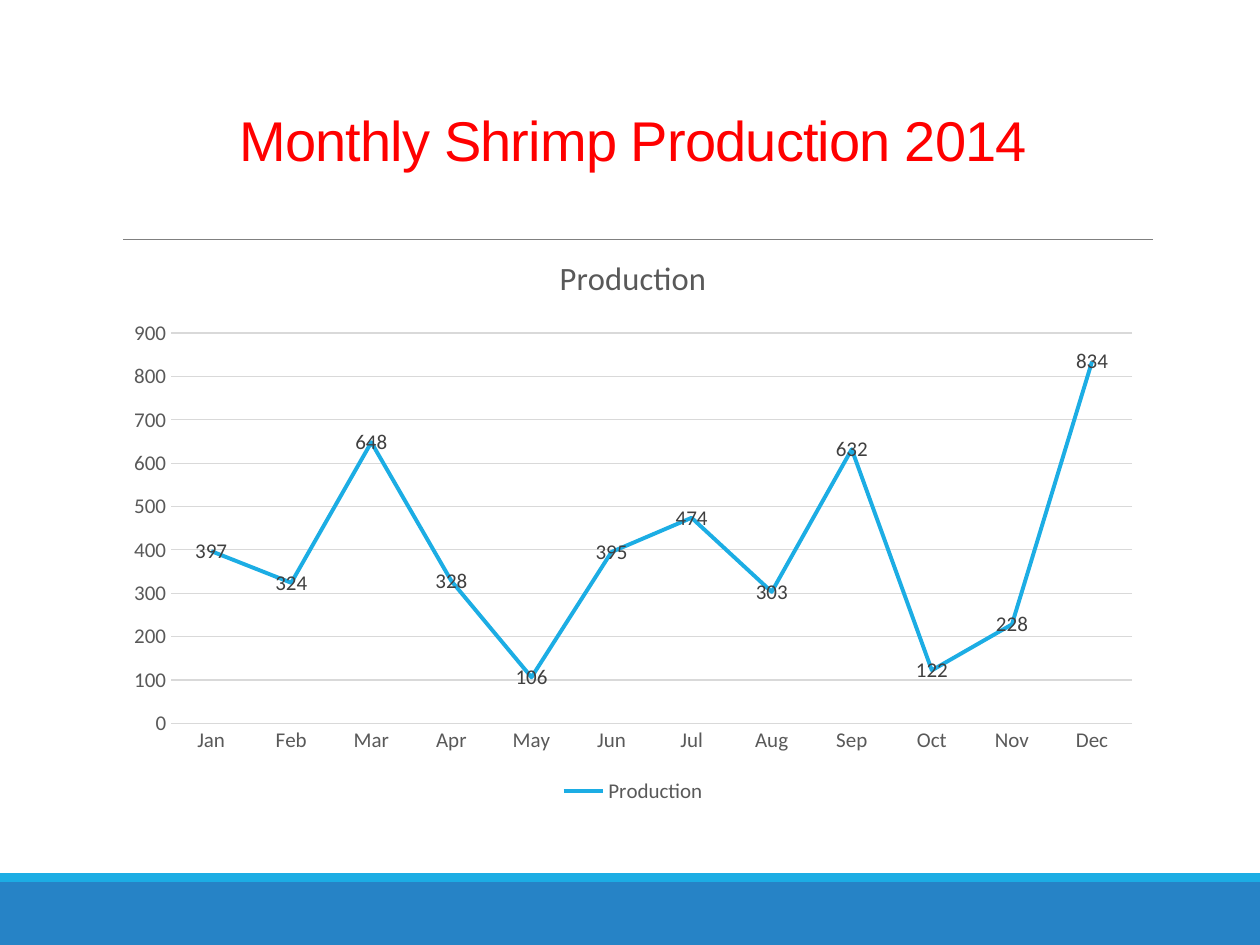
from dataclasses import dataclass

import lxml.etree
import pptx
import pptx.chart.data
import pptx.dml.color
import pptx.enum.chart
import pptx.enum.shapes
import pptx.enum.text
import pptx.oxml.ns
import pptx.util


@dataclass(frozen=True)
class Theme:
    background: str = "FFFFFF"
    band: str = "2683C6"
    accent: str = "1CADE4"
    rule: str = "808080"
    title: str = "FF0000"
    chart_text: str = "595959"
    data_label: str = "404040"
    grid: str = "D9D9D9"
    title_font: str = "Arial"
    body_font: str = "Calibri"
    title_size: float = 32
    title_break_size: float = 36
    chart_title_size: float = 18.6
    chart_size: float = 12


MONTHS = ["Jan", "Feb", "Mar", "Apr", "May", "Jun",
          "Jul", "Aug", "Sep", "Oct", "Nov", "Dec"]
PRODUCTION = [397, 324, 648, 328, 106, 395, 474, 303, 632, 122, 228, 834]


def rgb(color):
    return pptx.dml.color.RGBColor.from_string(color)


def add_child(parent, tag, **attributes):
    return lxml.etree.SubElement(parent, pptx.oxml.ns.qn(tag), **attributes)


class SlideBuilder:
    COLUMNS, ROWS = 100, 75

    def __init__(self, presentation, theme):
        self.theme = theme
        self.column = presentation.slide_width / self.COLUMNS
        self.row = presentation.slide_height / self.ROWS
        self.slide = presentation.slides.add_slide(presentation.slide_layouts[6])
        self.slide.background.fill.solid()
        self.slide.background.fill.fore_color.rgb = rgb(theme.background)

    def place(self, left, top, width, height):
        return (round(left * self.column), round(top * self.row),
                round(width * self.column), round(height * self.row))

    def style_font(self, font, size, color, name):
        font.size = pptx.util.Pt(size)
        font.color.rgb = rgb(color)
        font.name = name
        font.bold = False

    def style_line(self, line, color, width):
        line.color.rgb = rgb(color)
        line.width = pptx.util.Pt(width)

    def band(self, top, height, color):
        shape = self.slide.shapes.add_shape(
            pptx.enum.shapes.MSO_SHAPE.RECTANGLE,
            *self.place(0, top, self.COLUMNS, height))
        shape.shadow.inherit = False
        shape.fill.solid()
        shape.fill.fore_color.rgb = rgb(color)
        shape.line.fill.background()

    def rule(self, left, right, row):
        connector = self.slide.shapes.add_connector(
            pptx.enum.shapes.MSO_CONNECTOR.STRAIGHT, *self.place(left, row, right, row))
        self.style_line(connector.line, self.theme.rule, 0.5)
        add_child(connector.element.spPr, "a:effectLst")

    def title(self, text, *area):
        theme = self.theme
        text_frame = self.slide.shapes.add_textbox(*self.place(*area)).text_frame
        text_frame.word_wrap = True
        text_frame.vertical_anchor = pptx.enum.text.MSO_ANCHOR.BOTTOM
        text_frame.text = text
        paragraph = text_frame.paragraphs[0]
        paragraph.alignment = pptx.enum.text.PP_ALIGN.CENTER
        paragraph.line_spacing = 0.85
        for run in paragraph.runs:
            self.style_font(run.font, theme.title_size, theme.title, theme.title_font)
            run.font._element.set("spc", "-50")
        break_size = str(theme.title_break_size * 100)
        for line_break in paragraph._p.findall(pptx.oxml.ns.qn("a:br")):
            add_child(line_break, "a:rPr", sz=break_size)
        end = add_child(paragraph._p, "a:endParaRPr", sz=break_size)
        add_child(end, "a:latin", typeface=theme.body_font)

    def line_chart(self, name, categories, values, *area):
        theme = self.theme
        data = pptx.chart.data.CategoryChartData()
        data.categories = categories
        data.add_series(name, values)
        chart = self.slide.shapes.add_chart(
            pptx.enum.chart.XL_CHART_TYPE.LINE, *self.place(*area), data).chart
        self.style_font(chart.font, theme.chart_size, theme.chart_text, theme.body_font)

        chart.has_title = True
        chart.chart_title.include_in_layout = False
        chart.chart_title.text_frame.text = name
        title_run = chart.chart_title.text_frame.paragraphs[0].runs[0]
        self.style_font(title_run.font, theme.chart_title_size,
                        theme.chart_text, theme.body_font)

        chart.has_legend = True
        chart.legend.position = pptx.enum.chart.XL_LEGEND_POSITION.BOTTOM
        chart.legend.include_in_layout = False

        for axis in (chart.category_axis, chart.value_axis):
            axis.major_tick_mark = pptx.enum.chart.XL_TICK_MARK.NONE
            axis.minor_tick_mark = pptx.enum.chart.XL_TICK_MARK.NONE
            self.style_font(axis.tick_labels.font, theme.chart_size,
                            theme.chart_text, theme.body_font)
        self.style_line(chart.category_axis.format.line, theme.grid, 0.75)
        chart.value_axis.format.line.fill.background()
        chart.value_axis.has_major_gridlines = True
        self.style_line(chart.value_axis.major_gridlines.format.line, theme.grid, 0.75)

        plot = chart.plots[0]
        plot.vary_by_categories = False
        series = plot.series[0]
        series.smooth = False
        series.marker.style = pptx.enum.chart.XL_MARKER_STYLE.NONE
        self.style_line(series.format.line, theme.accent, 2.25)
        labels = series.data_labels
        labels.show_value = True
        labels.position = pptx.enum.chart.XL_LABEL_POSITION.CENTER
        self.style_font(labels.font, theme.chart_size, theme.data_label, theme.body_font)


def main():
    presentation = pptx.Presentation()
    presentation.slide_width = pptx.util.Inches(10)
    presentation.slide_height = pptx.util.Inches(7.5)
    theme = Theme()
    builder = SlideBuilder(presentation, theme)
    builder.band(70, 5, theme.band)
    builder.band(69.3, 0.7, theme.accent)
    builder.rule(9.8, 91.5, 19)
    builder.title("Monthly Shrimp Production 2014\v", 9, 3.1, 82.5, 17.1)
    builder.line_chart("Production", MONTHS, PRODUCTION, 9, 18.3, 82.5, 45.9)
    presentation.save("out.pptx")


if __name__ == "__main__":
    main()
